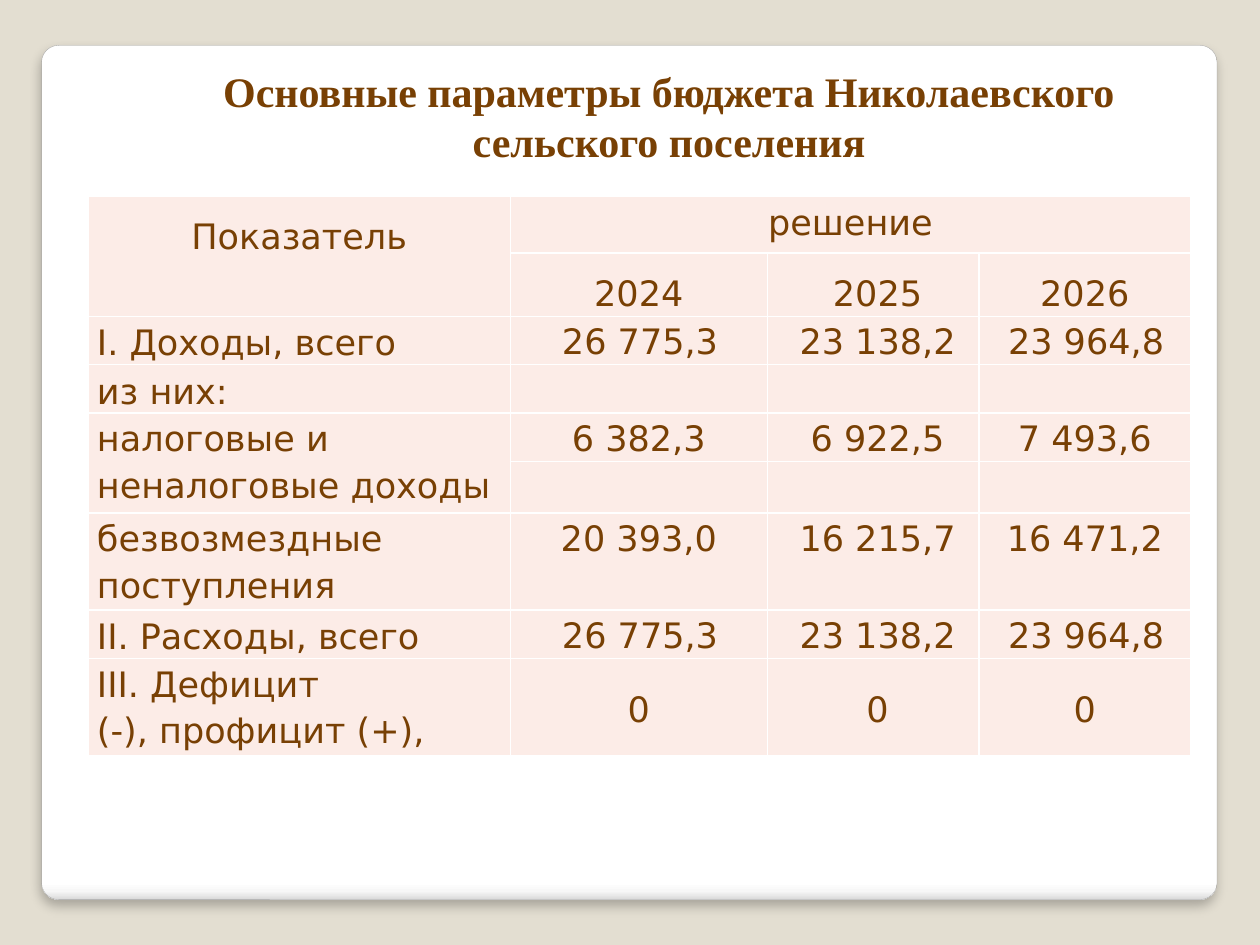
import pptx
import pptx.dml.color
import pptx.enum.shapes
import pptx.enum.text
import pptx.oxml
import pptx.oxml.ns
import pptx.util
from dataclasses import dataclass
from pptx.util import Inches

ALIGN = pptx.enum.text.PP_ALIGN
ANCHOR = pptx.enum.text.MSO_ANCHOR
NS = pptx.oxml.ns.nsdecls("a")


@dataclass(frozen=True)
class Theme:
    background: str = "E3DED1"
    panel_line: str = "A4A4A4"
    panel_stops: tuple = ((0, "FFFFFF"), (98, "FFFFFF"), (99, "F7F7F7"), (100, "DADADA"))
    shadow: str = "000000"
    text: str = "784004"
    cell: str = "FCECE7"
    border: str = "FFFFFF"
    title_font: str = "Times New Roman"
    table_font: str = "DejaVu Sans"
    title_size: int = 24
    table_size: int = 20


def rgb(value):
    return pptx.dml.color.RGBColor.from_string(value)


def write(frame, text, *, font, size, color, bold=False, align=ALIGN.LEFT,
          spacing=None, indent=0):
    """Fill a text frame, one paragraph for each line of text."""
    for number, line in enumerate(text.split("\n")):
        paragraph = frame.add_paragraph() if number else frame.paragraphs[0]
        paragraph.alignment = align
        if spacing:
            paragraph.line_spacing = spacing
        if indent:
            paragraph._p.get_or_add_pPr().set("indent", str(Inches(indent)))
        run = paragraph.add_run()
        run.text = line
        run.font.name = font
        run.font.size = pptx.util.Pt(size)
        run.font.bold = bold
        run.font.color.rgb = rgb(color)


class SlideBuilder:
    def __init__(self, slide, theme):
        self.slide = slide
        self.theme = theme

    def background(self):
        fill = self.slide.background.fill
        fill.solid()
        fill.fore_color.rgb = rgb(self.theme.background)

    def panel(self, left, top, width, height):
        theme = self.theme
        panel = self.slide.shapes.add_shape(
            pptx.enum.shapes.MSO_SHAPE.ROUNDED_RECTANGLE,
            Inches(left), Inches(top), Inches(width), Inches(height))
        panel.adjustments[0] = 0.02
        panel.line.color.rgb = rgb(theme.panel_line)
        panel.line.width = pptx.util.Pt(0.16)
        # Four gradient stops, running downwards
        panel.fill.gradient()
        panel.fill.gradient_angle = 270
        stops = "".join(f'<a:gs pos="{at * 1000}"><a:srgbClr val="{color}"/></a:gs>'
                        for at, color in theme.panel_stops)
        properties = panel._element.spPr
        old_stops = properties.find(".//" + pptx.oxml.ns.qn("a:gsLst"))
        old_stops.getparent().replace(
            old_stops, pptx.oxml.parse_xml(f"<a:gsLst {NS}>{stops}</a:gsLst>"))
        # Soft shadow below
        panel.shadow.inherit = False
        effects = properties.find(pptx.oxml.ns.qn("a:effectLst"))
        effects.append(pptx.oxml.parse_xml(
            f'<a:outerShdw {NS} blurRad="{pptx.util.Pt(6)}" dist="{pptx.util.Pt(4)}" '
            f'dir="5400000" algn="tl" rotWithShape="0"><a:srgbClr val="{theme.shadow}">'
            '<a:alpha val="25000"/></a:srgbClr></a:outerShdw>'))

    def title(self, text, left, top, width, height):
        theme = self.theme
        frame = self.slide.shapes.add_textbox(
            Inches(left), Inches(top), Inches(width), Inches(height)).text_frame
        frame.word_wrap = True
        frame.auto_size = pptx.enum.text.MSO_AUTO_SIZE.SHAPE_TO_FIT_TEXT
        write(frame, text, font=theme.title_font, size=theme.title_size,
              color=theme.text, bold=True, align=ALIGN.CENTER)

    def table(self, left, top, widths, heights):
        table = self.slide.shapes.add_table(
            len(heights), len(widths), Inches(left), Inches(top),
            Inches(sum(widths)), Inches(sum(heights))).table
        table.first_row = table.horz_banding = False
        for column, width in zip(table.columns, widths):
            column.width = Inches(width)
        for row, height in zip(table.rows, heights):
            row.height = Inches(height)
        for cell in table.iter_cells():
            self.style_cell(cell)
        return table

    def style_cell(self, cell):
        cell.margin_left = cell.margin_right = Inches(0.07)
        cell.margin_top = cell.margin_bottom = 0
        for side in ("lnL", "lnR", "lnT", "lnB"):
            cell._tc.get_or_add_tcPr().append(pptx.oxml.parse_xml(
                f'<a:{side} {NS} w="{pptx.util.Pt(1)}"><a:solidFill><a:srgbClr '
                f'val="{self.theme.border}"/></a:solidFill></a:{side}>'))
        cell.fill.solid()
        cell.fill.fore_color.rgb = rgb(self.theme.cell)

    def cell_text(self, cell, text, anchor=ANCHOR.TOP, spacing=1.15, **style):
        theme = self.theme
        cell.vertical_anchor = anchor
        write(cell.text_frame, text, font=theme.table_font, size=theme.table_size,
              color=theme.text, spacing=spacing, **style)


def main():
    deck = pptx.Presentation()
    deck.slide_width, deck.slide_height = Inches(10), Inches(7.5)
    page = SlideBuilder(deck.slides.add_slide(deck.slide_layouts[6]), Theme())

    # Backdrop and heading
    page.background()
    page.panel(0.33, 0.36, 9.33, 6.78)
    page.title("Основные параметры бюджета Николаевского сельского поселения",
               1.09, 0.47, 8.44, 0.91)

    # Budget table
    budget = page.table(0.7, 1.56, [3.35, 2.04, 1.68, 1.68],
                        [0.45, 0.5, 0.38, 0.38, 0.38, 0.41, 0.77, 0.38, 0.77])
    for first, last in (((0, 0), (1, 0)), ((0, 1), (0, 3)), ((4, 0), (5, 0))):
        budget.cell(*first).merge(budget.cell(*last))

    # Table head
    page.cell_text(budget.cell(0, 0), "Показатель", spacing=1.5,
                   align=ALIGN.CENTER, indent=-0.07)
    page.cell_text(budget.cell(0, 1), "решение", align=ALIGN.CENTER)
    for column, year in enumerate(("2024", "2025", "2026"), 1):
        page.cell_text(budget.cell(1, column), year, spacing=1.5,
                       align=ALIGN.CENTER, indent=0.07 if column == 2 else 0)

    # Row, label, label anchor, values, value anchor, indent of the outer values
    top, middle = ANCHOR.TOP, ANCHOR.MIDDLE
    totals = ("26 775,3", "23 138,2", "23 964,8")
    lines = (
        (2, "I. Доходы, всего", middle, totals, top, 0.02),
        (3, "из них:", middle, (), top, 0),
        (4, "налоговые и неналоговые доходы", top,
         ("6 382,3", "6 922,5", "7 493,6"), top, -0.07),
        (6, "безвозмездные поступления", top,
         ("20 393,0", "16 215,7", "16 471,2"), top, -0.07),
        (7, "II. Расходы, всего", middle, totals, top, 0.02),
        (8, "III. Дефицит\n(-), профицит (+),", top, ("0", "0", "0"), middle, 0),
    )
    for row, label, label_anchor, values, value_anchor, indent in lines:
        page.cell_text(budget.cell(row, 0), label, anchor=label_anchor)
        for column, value in enumerate(values, 1):
            page.cell_text(budget.cell(row, column), value, anchor=value_anchor,
                           align=ALIGN.CENTER, indent=0.07 if column == 2 else indent)

    deck.save("out.pptx")


if __name__ == "__main__":
    main()
